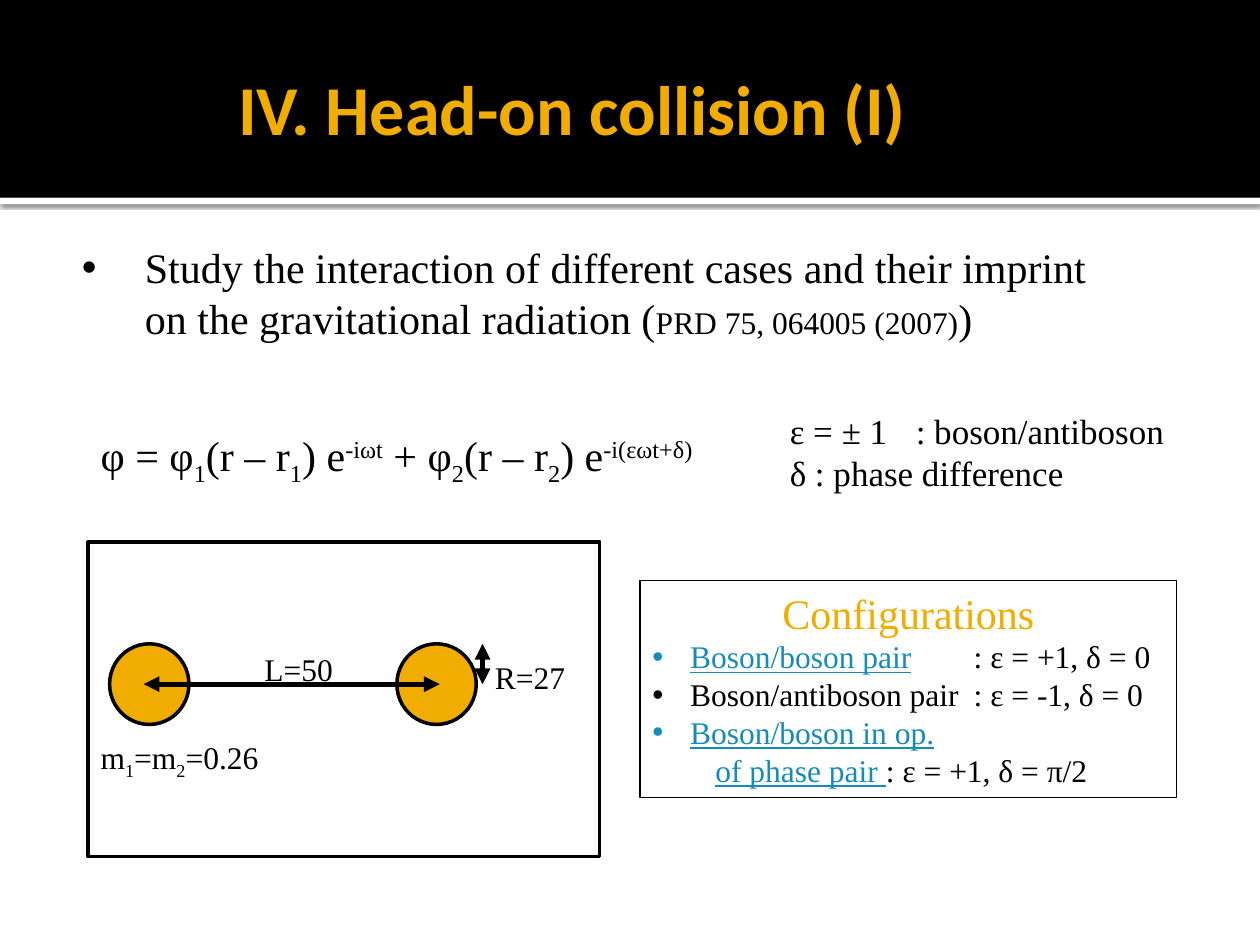
import dataclasses

import lxml.etree
import pptx
import pptx.dml.color
import pptx.enum.shapes
import pptx.enum.text
import pptx.oxml.ns
import pptx.util

Inches = pptx.util.Inches
Pt = pptx.util.Pt
SHAPE = pptx.enum.shapes.MSO_SHAPE
ALIGN = pptx.enum.text.PP_ALIGN
ANCHOR = pptx.enum.text.MSO_ANCHOR
NO_FIT = pptx.enum.text.MSO_AUTO_SIZE.NONE


@dataclasses.dataclass(frozen=True)
class Theme:
    ink: str = "000000"
    paper: str = "FFFFFF"
    accent: str = "F0AD00"
    link: str = "168BBA"
    title_font: str = "Calibri"
    text_font: str = "Times New Roman"
    title_size: int = 40
    lead_size: int = 24
    note_size: int = 20
    label_size: int = 18


THEME = Theme()
SUB = {"baseline": -25}
SUP = {"baseline": 30}
LINK = {"color": THEME.link, "underline": True}


def rgb(value):
    return pptx.dml.color.RGBColor.from_string(value)


def box(left, top, width, height):
    return [Inches(length) for length in (left, top, width, height)]


def add_xml(parent, tag, **attributes):
    return lxml.etree.SubElement(parent, pptx.oxml.ns.qn(tag), attributes)


def set_values(target, values):
    for name, value in values.items():
        setattr(target, name, value)


class SlideBuilder:
    def __init__(self, slide, theme):
        self.slide = slide
        self.theme = theme

    def paragraph(self, paragraph, runs, size, align=ALIGN.LEFT, bullet=False,
                  margin=0, hanging=0, tab=None):
        """Fill a paragraph with (text, style) runs; margins and tab are inches."""
        set_values(paragraph, {"alignment": align, "space_before": Pt(0)})
        properties = paragraph._p.get_or_add_pPr()
        properties.set("marL", str(Inches(margin)))
        properties.set("indent", str(Inches(-hanging)))
        if bullet:
            add_xml(properties, "a:buFont", typeface="Arial")
            add_xml(properties, "a:buChar", char="•")
        if tab:
            stops = add_xml(properties, "a:tabLst")
            add_xml(stops, "a:tab", pos=str(Inches(tab)), algn="l")
        for text, style in runs:
            run = paragraph.add_run()
            run.text = text
            set_values(run.font, {
                "name": style.get("font", self.theme.text_font),
                "size": Pt(style.get("size", size)),
                "bold": style.get("bold", False),
                "underline": style.get("underline", False),
            })
            run.font.color.rgb = rgb(style.get("color", self.theme.ink))
            if "baseline" in style:
                run._r.get_or_add_rPr().set("baseline", str(style["baseline"] * 1000))

    def fill_frame(self, frame, paragraphs, size):
        """Put (runs, paragraph format) pairs into a text frame."""
        set_values(frame, {"word_wrap": True, "auto_size": NO_FIT})
        for index, (runs, layout) in enumerate(paragraphs):
            target = frame.add_paragraph() if index else frame.paragraphs[0]
            self.paragraph(target, runs, size, **layout)

    def placeholder(self, index, place, paragraphs, size, anchor):
        holder = self.slide.placeholders[index]
        set_values(holder, dict(zip(("left", "top", "width", "height"), box(*place))))
        set_values(holder.text_frame, {
            "vertical_anchor": anchor, "margin_left": Inches(0.1),
            "margin_right": Inches(0.05), "margin_top": Inches(0.05),
            "margin_bottom": Inches(0.05)})
        self.fill_frame(holder.text_frame, paragraphs, size)

    def text(self, place, paragraphs, size):
        label = self.slide.shapes.add_textbox(*box(*place))
        self.fill_frame(label.text_frame, paragraphs, size)

    def shape(self, kind, place, fill=None, line_width=None):
        shape = self.slide.shapes.add_shape(kind, *box(*place))
        shape.shadow.inherit = False
        if fill:
            shape.fill.solid()
            shape.fill.fore_color.rgb = rgb(fill)
        else:
            shape.fill.background()
        if line_width:
            shape.line.color.rgb = rgb(self.theme.ink)
            shape.line.width = Pt(line_width)
        else:
            shape.line.fill.background()
        return shape

    def band(self, place, fill, shadow=False):
        """Add a full-width strip behind everything already on the slide."""
        strip = self.shape(SHAPE.RECTANGLE, place, fill)
        if shadow:
            effects = strip._element.spPr.find(pptx.oxml.ns.qn("a:effectLst"))
            outer = add_xml(effects, "a:outerShdw", blurRad=str(Pt(2.5)),
                            dist=str(Pt(0.8)), dir="5400000", rotWithShape="0")
            color = add_xml(outer, "a:srgbClr", val=self.theme.ink)
            add_xml(color, "a:alpha", val="60000")
        self.slide.shapes._spTree.insert(2, strip._element)

    def double_arrow(self, start, end):
        arrow = self.slide.shapes.add_connector(
            pptx.enum.shapes.MSO_CONNECTOR.STRAIGHT,
            *[Inches(length) for length in (*start, *end)])
        arrow.line.color.rgb = rgb(self.theme.ink)
        arrow.line.width = Pt(3)
        properties = arrow._element.spPr
        for tag in ("a:headEnd", "a:tailEnd"):
            add_xml(properties.get_or_add_ln(), tag, type="triangle")
        add_xml(properties, "a:effectLst")


def add_heading(builder):
    title_style = {"font": THEME.title_font, "color": THEME.accent, "bold": True}
    builder.placeholder(0, (0.16, 0.47, 9.45, 0.77),
                        [([("IV. Head-on collision (I)", title_style)], {"margin": 1.63})],
                        THEME.title_size, ANCHOR.MIDDLE)
    study = [("Study the interaction of different cases and their imprint "
              "on the gravitational radiation (", {}),
             ("PRD 75, 064005 (2007)", {"size": THEME.label_size}), (")", {})]
    builder.placeholder(1, (0.55, 1.87, 8.51, 0.91),
                        [(study, {"bullet": True, "margin": 0.5, "hanging": 0.5})],
                        THEME.lead_size, ANCHOR.TOP)
    builder.band((0, 0, 10, 1.57), THEME.ink)
    builder.band((0, 1.57, 10, 0.05), THEME.paper, shadow=True)


def add_field_equation(builder):
    equation = [("φ = φ", {}), ("1", SUB), ("(r – r", {}), ("1", SUB), (") e", {}),
                ("-iωt", SUP), (" + φ", {}), ("2", SUB), ("(r – r", {}), ("2", SUB),
                (") e", {}), ("-i(εωt+δ)", SUP)]
    builder.text((0.7, 3.36, 5.31, 0.5), [(equation, {})], THEME.lead_size)
    builder.text((6.17, 3.2, 3.2, 0.77),
                 [([("ε = ± 1\t: boson/antiboson", {})], {"tab": 0.91}),
                  ([("δ : phase difference", {})], {})], THEME.note_size)


def add_configurations(builder):
    item = {"bullet": True, "margin": 0.3, "hanging": 0.3, "tab": 2.55}
    panel = builder.shape(SHAPE.RECTANGLE, (5.08, 4.61, 4.26, 1.72), line_width=0.75)
    panel.text_frame.vertical_anchor = ANCHOR.TOP
    builder.fill_frame(panel.text_frame, [
        ([("Configurations", {"size": THEME.lead_size, "color": THEME.accent})],
         {"align": ALIGN.CENTER}),
        ([("Boson/boson pair", LINK), ("\t: ε = +1, δ = 0", {})], item),
        ([("Boson/antiboson pair\t: ε = -1, δ = 0", {})], item),
        ([("Boson/boson in op.", LINK)], item),
        ([("\tof phase pair ", LINK), (": ε = +1, δ = π/2", {})], {"tab": 1}),
    ], THEME.label_size)


def add_collision_diagram(builder):
    star_top, star_width, star_height = 5.11, 0.63, 0.64
    axis = star_top + star_height / 2
    for star_left in (0.87, 3.15):
        builder.shape(SHAPE.OVAL, (star_left, star_top, star_width, star_height),
                      THEME.accent, 2)
    builder.double_arrow((1.14, axis), (3.49, axis))
    builder.double_arrow((3.83, axis), (3.83, star_top))
    masses = [("m", {}), ("1", SUB), ("=m", {}), ("2", SUB), ("=0.26", {})]
    for place, runs in (((2, 5.11, 0.78, 0.37), [("L=50", {})]),
                        ((0.7, 5.81, 1.6, 0.37), masses),
                        ((3.83, 5.17, 0.79, 0.37), [("R=27", {})])):
        builder.text(place, [(runs, {})], THEME.label_size)
    builder.shape(SHAPE.RECTANGLE, (0.7, 4.3, 4.06, 2.5), line_width=2)


def main():
    deck = pptx.Presentation()
    set_values(deck, {"slide_width": Inches(10), "slide_height": Inches(7.5)})
    builder = SlideBuilder(deck.slides.add_slide(deck.slide_layouts[1]), THEME)
    add_heading(builder)
    add_field_equation(builder)
    add_configurations(builder)
    add_collision_diagram(builder)
    deck.save("out.pptx")


if __name__ == "__main__":
    main()
